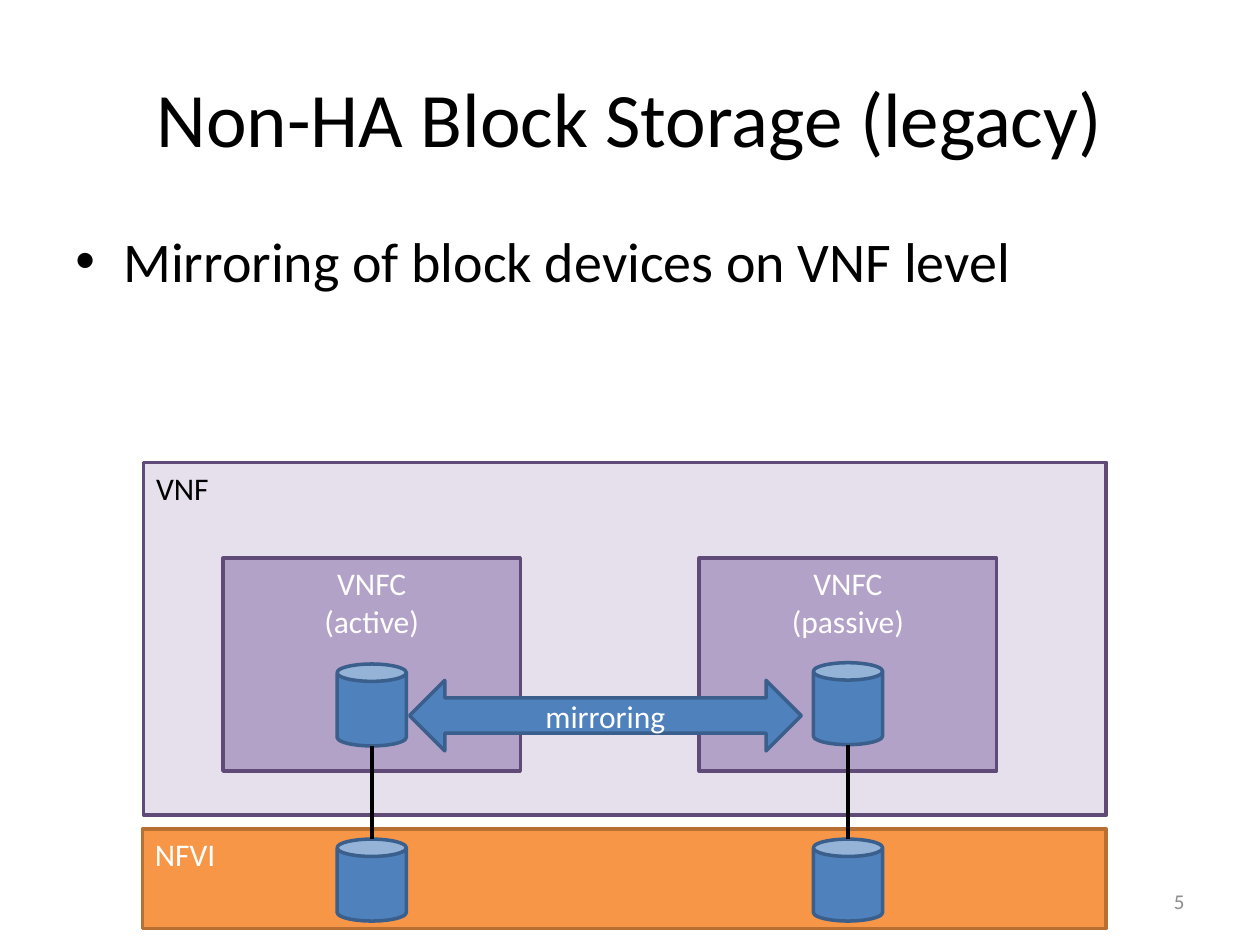
from dataclasses import dataclass

import pptx
import pptx.util
from lxml import etree
from pptx.dml.color import RGBColor
from pptx.enum.shapes import MSO_CONNECTOR, MSO_SHAPE
from pptx.enum.text import MSO_ANCHOR, PP_ALIGN
from pptx.oxml.ns import qn
from pptx.util import Inches, Pt

FONT = "Calibri"
WHITE = RGBColor(0xFF, 0xFF, 0xFF)
BLACK = RGBColor(0, 0, 0)
GREY = RGBColor(0x8C, 0x8C, 0x8C)
ORANGE = RGBColor(0xF7, 0x96, 0x46)
BROWN = RGBColor(0xB7, 0x6F, 0x34)
LILAC = RGBColor(0xE6, 0xE0, 0xEC)
MAUVE = RGBColor(0xB3, 0xA2, 0xC7)
PURPLE = RGBColor(0x5F, 0x4A, 0x78)
BLUE = RGBColor(0x4F, 0x81, 0xBD)
NAVY = RGBColor(0x3A, 0x5F, 0x8C)


@dataclass
class Area:
    left: float
    top: float
    width: float
    height: float

    def place(self) -> list:
        return [Inches(v) for v in (self.left, self.top, self.width, self.height)]


@dataclass
class Text:
    words: str
    size: float = 18
    color: RGBColor = WHITE
    align: PP_ALIGN = PP_ALIGN.CENTER
    anchor: MSO_ANCHOR = MSO_ANCHOR.MIDDLE


@dataclass
class Block:
    area: Area
    fill: RGBColor
    line: RGBColor
    text: Text


@dataclass
class Node:
    left: float
    role: str
    disk: float  # top of the virtual disk


def write(frame, text: Text) -> None:
    frame.word_wrap = True
    frame.vertical_anchor = text.anchor
    frame.text = text.words
    for par in frame.paragraphs:
        par.alignment = text.align
        par.font.name = FONT
        par.font.size = Pt(text.size)
        par.font.color.rgb = text.color


def add_text(slide, area: Area, text: Text):
    box = slide.shapes.add_textbox(*area.place())
    write(box.text_frame, text)
    return box


def add_form(slide, kind: MSO_SHAPE, area: Area, fill: RGBColor, line: RGBColor):
    form = slide.shapes.add_shape(kind, *area.place())
    form.shadow.inherit = False
    form.fill.solid()
    form.fill.fore_color.rgb = fill
    form.line.color.rgb = line
    form.line.width = Pt(2)
    return form


def add_block(slide, block: Block) -> None:
    form = add_form(slide, MSO_SHAPE.RECTANGLE, block.area, block.fill, block.line)
    write(form.text_frame, block.text)


def add_disk(slide, left: float, top: float) -> None:
    add_form(slide, MSO_SHAPE.CAN, Area(left, top, DISK_W, DISK_H), BLUE, NAVY)


def add_link(slide, x: float, top: float, bottom: float) -> None:
    link = slide.shapes.add_connector(
        MSO_CONNECTOR.STRAIGHT, Inches(x), Inches(top), Inches(x), Inches(bottom))
    link.line.color.rgb = BLACK
    link.line.width = Pt(2.25)
    etree.SubElement(link._element.spPr, qn("a:effectLst"))


def add_bullet(par) -> None:
    props = par._p.get_or_add_pPr()
    props.set("marL", str(Inches(0.38)))
    props.set("indent", str(-Inches(0.38)))
    etree.SubElement(props, qn("a:buFont")).set("typeface", "Arial")
    mark = etree.SubElement(props, qn("a:buChar"))
    mark.set("char", "•")
    # Bullet parts come before the default run properties
    props.append(props.find(qn("a:defRPr")))


DISK_W, DISK_H = 0.55, 0.65
BASE = 6.66  # top of the physical disks
NODE_W = 2.36
NODES = [Node(1.77, "active", 5.27), Node(5.55, "passive", 5.26)]
LAYERS = [
    Block(Area(1.13, 6.58, 7.65, 0.79), ORANGE, BROWN,
          Text("NFVI", align=PP_ALIGN.LEFT, anchor=MSO_ANCHOR.TOP)),
    Block(Area(1.14, 3.67, 7.64, 2.8), LILAC, PURPLE,
          Text("VNF", color=BLACK, align=PP_ALIGN.LEFT, anchor=MSO_ANCHOR.TOP)),
]


def main() -> None:
    deck = pptx.Presentation()
    deck.slide_width, deck.slide_height = Inches(10), Inches(7.5)
    slide = deck.slides.add_slide(deck.slide_layouts[6])

    # Title, bullet and page number
    add_text(slide, Area(0.5, 0.3, 9, 1.25),
             Text("Non-HA Block Storage (legacy)", 44, BLACK))
    body = add_text(slide, Area(0.5, 1.75, 9, 4.95),
                    Text("Mirroring of block devices on VNF level", 32, BLACK,
                         PP_ALIGN.LEFT, MSO_ANCHOR.TOP))
    add_bullet(body.text_frame.paragraphs[0])
    add_text(slide, Area(7.17, 6.95, 2.33, 0.4),
             Text("5", 12, GREY, PP_ALIGN.RIGHT))

    # Layers
    for layer in LAYERS:
        add_block(slide, layer)

    # Nodes with their virtual and physical disks
    for node in NODES:
        add_block(slide, Block(
            Area(node.left, 4.43, NODE_W, 1.69), MAUVE, PURPLE,
            Text(f"VNFC\n({node.role})", anchor=MSO_ANCHOR.TOP)))
        mid = node.left + NODE_W / 2
        for top in (node.disk, BASE):
            add_disk(slide, mid - DISK_W / 2, top)
        add_link(slide, mid, node.disk + DISK_H, BASE)

    # Mirroring arrow
    arrow = add_form(slide, MSO_SHAPE.LEFT_RIGHT_ARROW,
                     Area(3.25, 5.4, 3.11, 0.56), BLUE, NAVY)
    write(arrow.text_frame, Text("mirroring"))

    deck.save("out.pptx")


if __name__ == "__main__":
    main()
